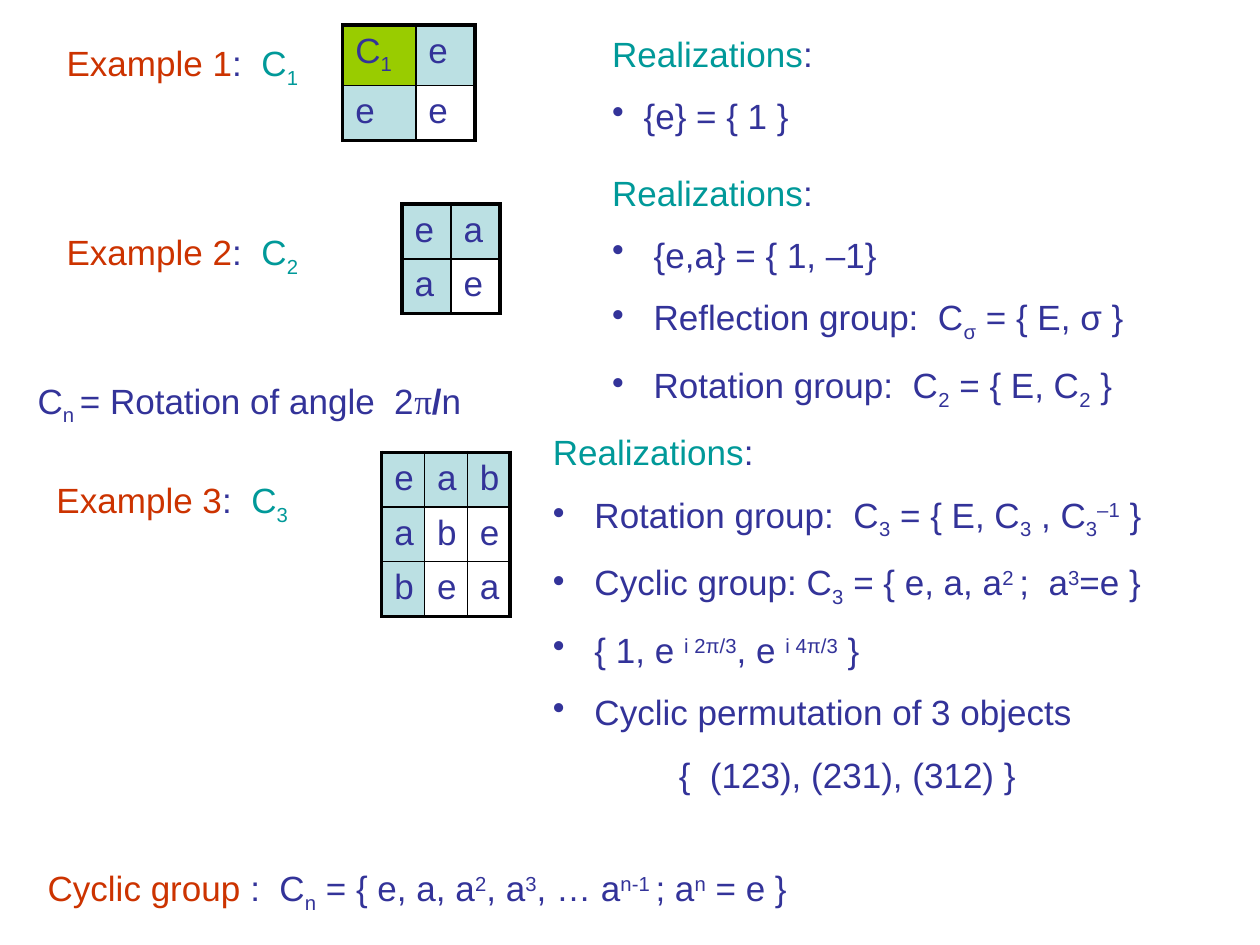
"""Build the slide on cyclic groups, their multiplication tables and realizations."""
from dataclasses import dataclass

from lxml import etree
from pptx import Presentation
from pptx.dml.color import RGBColor
from pptx.enum.text import MSO_AUTO_SIZE
from pptx.oxml.ns import qn
from pptx.slide import Slide
from pptx.util import Inches, Pt

FIT_SHAPE = MSO_AUTO_SIZE.SHAPE_TO_FIT_TEXT
BLANK_LAYOUT = 6
COLORS = {
    "red": "CC3300",
    "blue": "333399",
    "teal": "009999",
    "green": "99CC00",
    "pale": "BBE0E3",
    "black": "000000",
}
SUBSCRIPT, SUPERSCRIPT = "-25000", "30000"


def rgb(name):
    """Return the named colour."""
    return RGBColor.from_string(COLORS[name])


def split_scripts(text):
    """Yield (text, baseline) pieces, where ~x~ is a subscript and ^x^ a superscript."""
    for index, part in enumerate(text.split("~")):
        if index % 2:
            yield part, SUBSCRIPT
            continue
        for position, piece in enumerate(part.split("^")):
            if piece:
                yield piece, SUPERSCRIPT if position % 2 else None


@dataclass
class GroupSlide:
    """Hold the text style and the current slide."""

    slide: Slide
    font: str = "Arial"
    size: float = 20
    gap: float = 11.5
    row_height: float = 0.43
    outer_line: float = 2.25
    inner_line: float = 1

    def add_runs(self, paragraph, text, color="blue", font=None, bold=False):
        """Append styled runs to a paragraph."""
        for piece, baseline in split_scripts(text):
            run = paragraph.add_run()
            run.text = piece
            run.font.name = font or self.font
            run.font.size = Pt(self.size)
            run.font.bold = bold
            run.font.color.rgb = rgb(color)
            if baseline:
                run._r.get_or_add_rPr().set("baseline", baseline)

    def text_box(self, left, top, width, height, segments):
        """Add a wrapping text box, fill its first line and return its text frame."""
        shape = self.slide.shapes.add_textbox(
            Inches(left), Inches(top), Inches(width), Inches(height))
        text_frame = shape.text_frame
        text_frame.word_wrap = True
        text_frame.auto_size = FIT_SHAPE
        for segment in segments:
            self.add_runs(text_frame.paragraphs[0], *segment)
        return text_frame

    def example(self, number, left, top):
        """Add the label of a numbered example."""
        self.text_box(left, top, 2.13, 0.56, [
            (f"Example {number}", "red"), (":  ",), (f"C~{number}~", "teal")])

    def realizations(self, left, top, width, height, items, indent=0.33, closing=None):
        """Add a headed bullet list with an optional closing line."""
        text_frame = self.text_box(left, top, width, height,
                                   [("Realizations", "teal"), (":",)])
        for item in items:
            properties = self.indented_line(text_frame, item, indent)
            properties.set("indent", str(-Inches(indent)))
            etree.SubElement(properties, qn("a:buChar")).set("char", "•")
        if closing:
            self.indented_line(text_frame, closing, 1)

    def indented_line(self, text_frame, text, indent):
        """Add a spaced paragraph and return its properties element."""
        paragraph = text_frame.add_paragraph()
        paragraph.space_before = Pt(self.gap)
        self.add_runs(paragraph, text)
        properties = paragraph._p.get_or_add_pPr()
        properties.set("marL", str(Inches(indent)))
        return properties

    def group_table(self, left, top, widths, rows, corner="pale"):
        """Add a multiplication table with a shaded first row and column."""
        last_row, last_column = len(rows) - 1, len(widths) - 1
        table = self.slide.shapes.add_table(
            len(rows), len(widths), Inches(left), Inches(top),
            Inches(sum(widths)), Inches(self.row_height * len(rows))).table
        table.first_row = table.horz_banding = False
        for column, width in zip(table.columns, widths):
            column.width = Inches(width)
        for row_index, row in enumerate(rows):
            for column_index, text in enumerate(row):
                cell = table.cell(row_index, column_index)
                self.add_runs(cell.text_frame.paragraphs[0], text)
                if row_index and column_index:
                    cell.fill.background()
                else:
                    cell.fill.solid()
                    shade = "pale" if row_index or column_index else corner
                    cell.fill.fore_color.rgb = rgb(shade)
                self.borders(cell, {
                    "L": column_index == 0, "R": column_index == last_column,
                    "T": row_index == 0, "B": row_index == last_row})

    def borders(self, cell, sides):
        """Draw cell borders, heavier on the sides that are outer edges."""
        properties = cell._tc.get_or_add_tcPr()
        for index, (side, is_outer) in enumerate(sides.items()):
            line = etree.Element(qn(f"a:ln{side}"))
            line.set("w", str(Pt(self.outer_line if is_outer else self.inner_line)))
            fill = etree.SubElement(line, qn("a:solidFill"))
            etree.SubElement(fill, qn("a:srgbClr")).set("val", COLORS["black"])
            properties.insert(index, line)


def main():
    """Build and save the presentation."""
    presentation = Presentation()
    presentation.slide_width, presentation.slide_height = Inches(10), Inches(7.5)
    page = GroupSlide(presentation.slides.add_slide(
        presentation.slide_layouts[BLANK_LAYOUT]))

    page.example(1, 0.43, 0.28)
    page.group_table(2.72, 0.2, [0.58, 0.47], [["C~1~", "e"], "ee"], corner="green")
    page.example(2, 0.43, 1.78)
    page.group_table(3.19, 1.62, [0.39] * 2, ["ea", "ae"])
    page.example(3, 0.35, 3.75)
    page.group_table(3.03, 3.59, [0.34] * 3, ["eab", "abe", "bea"])

    page.realizations(4.29, 3.37, 4.96, 3.51, [
        "Rotation group:  C~3~ = { E, C~3~ , C~3~^–1^ }",
        "Cyclic group: C~3~ = { e, a, a^2 ^;  a^3^=e }",
        "{ 1, e ^i 2π/3^, e ^i 4π/3^ }",
        "Cyclic permutation of 3 objects",
    ], closing="{  (123), (231), (312) }")
    page.realizations(4.76, 1.31, 4.49, 2.27, [
        "{e,a} = { 1, –1}",
        "Reflection group:  C~σ~ = { E, σ }",
        "Rotation group:  C~2~ = { E, C~2~ }",
    ])
    page.realizations(4.76, 0.21, 4.49, 1.02, ["{e} = { 1 }"], indent=0.25)

    page.text_box(0.2, 2.96, 3.7, 0.88, [
        ("C~n ~= Rotation of angle  2",), ("π", "blue", "Times New Roman"),
        ("/", "blue", None, True), ("n",)])
    page.text_box(0.28, 6.83, 6.54, 0.6, [
        ("Cyclic group", "red"),
        (" :  C~n~ = { e, a, a^2^, a^3^, … a^n-1 ^; a^n^ = e }",)])

    presentation.save("out.pptx")


if __name__ == "__main__":
    main()
